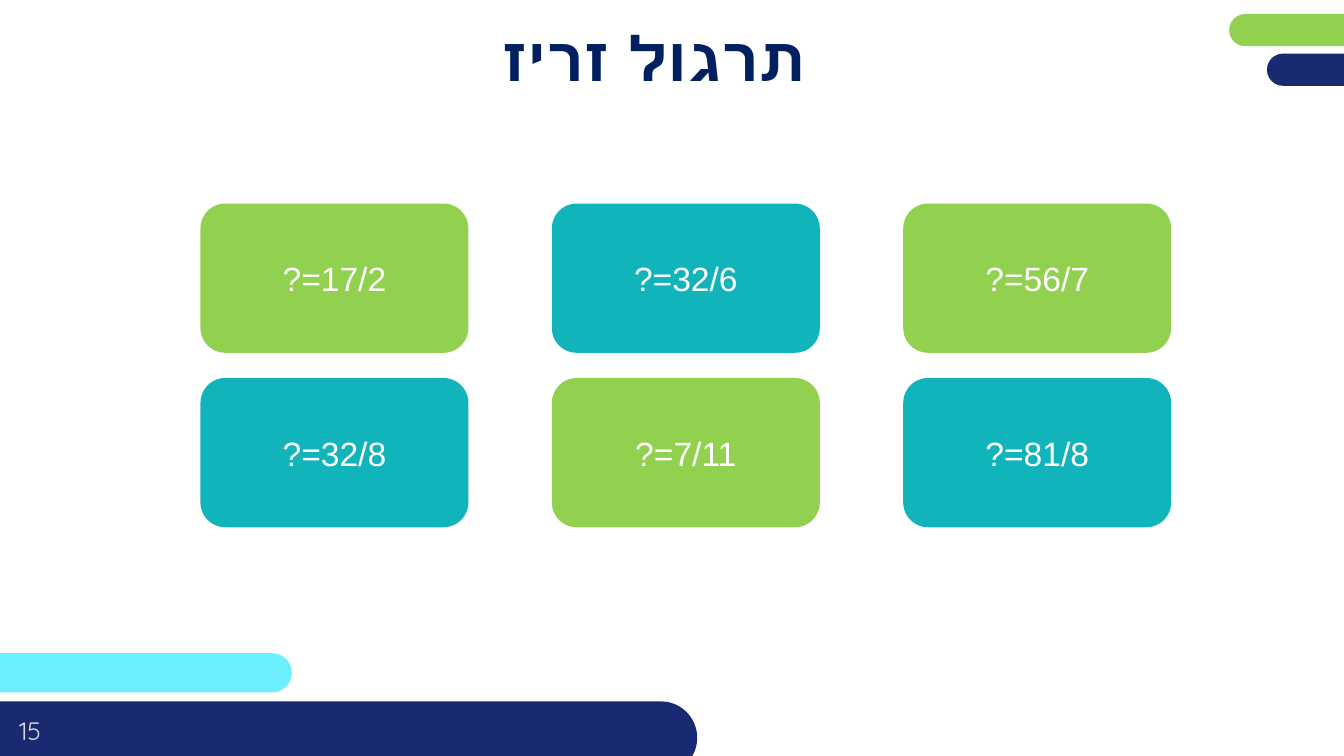
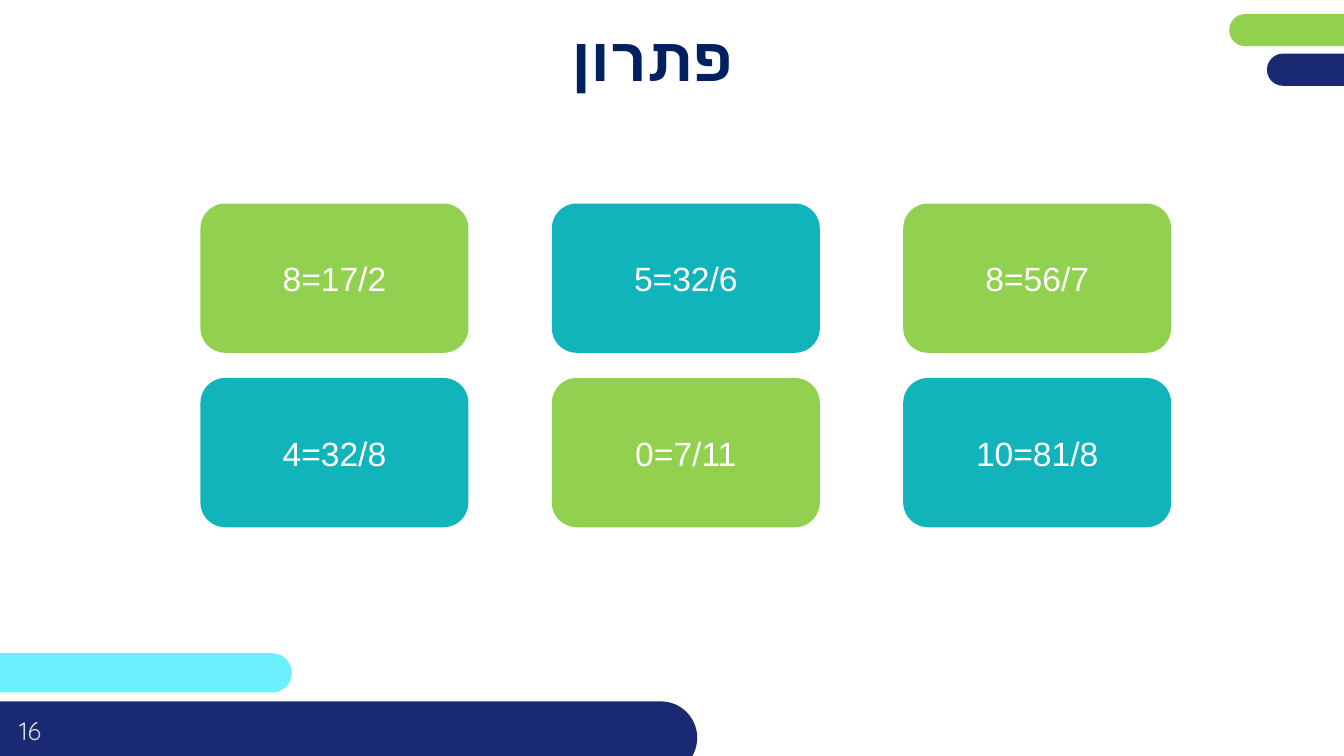
import pptx
import pptx.util
import pptx.oxml.ns
import pptx.dml.color
import pptx.enum.shapes
import pptx.enum.text
import lxml.etree

Pt = pptx.util.Pt
Shape = pptx.enum.shapes.MSO_SHAPE

theme = {
    "navy": "192A72",
    "green": "92D050",
    "teal": "12B4BC",
    "cyan": "6CF0FF",
    "title": {"size": 44, "bold": True, "color": "002060", "complex": "Quicksand"},
    "card": {"size": 24, "bold": False, "color": "FFFFFF", "complex": "Arial"},
    "number": {"size": 18, "bold": False, "color": "D9D9D9", "complex": None},
    "font": "Quicksand",
}

bands = [
    (905, 38.3, 124, 23, "navy"),
    (878, 10, 148, 23, "green"),
    (-38.5, 466.6, 247, 28, "cyan"),
    (-77, 501, 575, 52, "navy"),
]

exercises = [["17/2", "32/6", "56/7"], ["32/8", "7/11", "81/8"]]
slides = [
    ("תרגול זריז", 15, [["?", "?", "?"], ["?", "?", "?"]]),
    ("פתרון", 16, [["8", "5", "8"], ["4", "0", "10"]]),
]

card_left, card_top = 143.2, 145.4
card_width, card_height = 191.4, 106.6
column_step, row_step = 251, 124.6


def write_text(box, text, style):
    frame = box.text_frame
    frame.word_wrap = True
    frame.vertical_anchor = pptx.enum.text.MSO_ANCHOR.MIDDLE
    para = frame.paragraphs[0]
    para.alignment = pptx.enum.text.PP_ALIGN.CENTER
    span = para.add_run()
    span.text = text
    values = {"name": theme["font"], "size": Pt(style["size"]), "bold": style["bold"]}
    for name, value in values.items():
        setattr(span.font, name, value)
    span.font.color.rgb = pptx.dml.color.RGBColor.from_string(style["color"])
    if style["complex"]:
        para._p.get_or_add_pPr().set("rtl", "1")
        properties = span._r.get_or_add_rPr()
        complex_font = lxml.etree.SubElement(properties, pptx.oxml.ns.qn("a:cs"))
        complex_font.set("typeface", style["complex"])


def add_filled(page, kind, left, top, width, height, color):
    shape = page.shapes.add_shape(kind, Pt(left), Pt(top), Pt(width), Pt(height))
    shape.shadow.inherit = False
    shape.fill.solid()
    shape.fill.fore_color.rgb = pptx.dml.color.RGBColor.from_string(theme[color])
    shape.line.fill.background()
    return shape


deck = pptx.Presentation()
deck.slide_width, deck.slide_height = Pt(960), Pt(540)

for title, number, answers in slides:
    page = deck.slides.add_slide(deck.slide_layouts[6])

    for left, top, width, height, color in bands:
        band = add_filled(page, Shape.ROUNDED_RECTANGLE, left, top, width, height, color)
        band.adjustments[0] = 0.5

    number_box = page.shapes.add_textbox(Pt(-10.4), Pt(501), Pt(64), Pt(41))
    write_text(number_box, str(number), theme["number"])

    title_box = page.shapes.add_textbox(Pt(80.6), Pt(12.2), Pt(772), Pt(57))
    for side in ("left", "top", "right", "bottom"):
        setattr(title_box.text_frame, f"margin_{side}", Pt(0))
    write_text(title_box, title, theme["title"])

    for row, (questions, results) in enumerate(zip(exercises, answers)):
        for column, (question, result) in enumerate(zip(questions, results)):
            card = add_filled(
                page,
                Shape.FLOWCHART_ALTERNATE_PROCESS,
                card_left + column * column_step,
                card_top + row * row_step,
                card_width,
                card_height,
                ("green", "teal")[(row + column) % 2],
            )
            write_text(card, f"{question}={result}", theme["card"])

deck.save("out.pptx")
